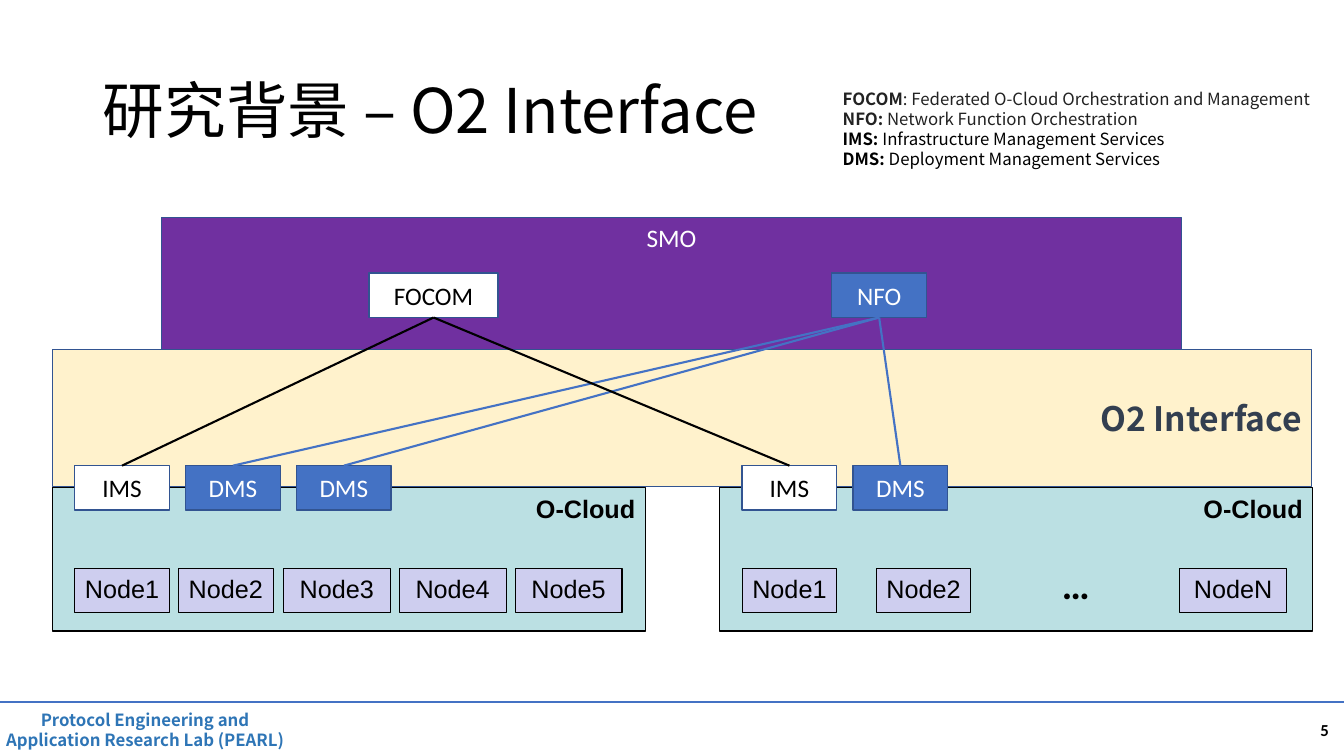
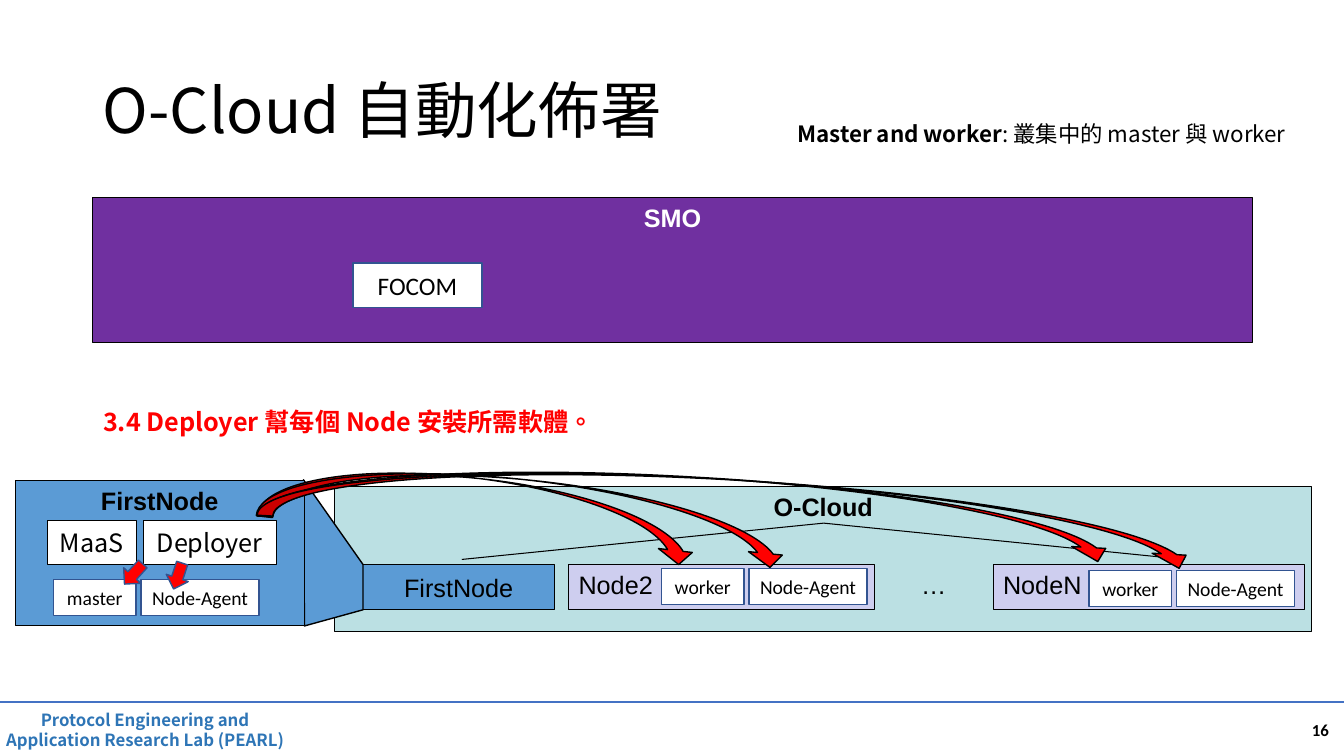
from dataclasses import dataclass

from lxml import etree
from pptx import Presentation
from pptx import util as u
from pptx.dml.color import RGBColor
from pptx.enum import shapes, text
from pptx.oxml.ns import qn

PX = 9144
KIND = shapes.MSO_SHAPE
LEFT, MID, RIGHT = text.PP_ALIGN.LEFT, text.PP_ALIGN.CENTER, text.PP_ALIGN.RIGHT
TOP, CTR = text.MSO_ANCHOR.TOP, text.MSO_ANCHOR.MIDDLE


@dataclass(frozen=True)
class Theme:
    """Colours, fonts and type sizes."""
    black: str = "000000"
    white: str = "FFFFFF"
    gray: str = "222222"
    slate: str = "333F50"
    blue: str = "4472C4"
    edge: str = "325491"
    brand: str = "2E75B6"
    sky: str = "5B9BD5"
    purple: str = "7030A0"
    cream: str = "FFF2CC"
    teal: str = "BBE0E3"
    lilac: str = "CECEEF"
    red: str = "FF0000"
    noto: str = "Noto Sans CJK SC"
    sans: str = "Calibri"
    arial: str = "Arial"
    title: int = 44
    dots: int = 28
    head: int = 24
    body: int = 18
    note: int = 16
    small: int = 14
    foot: int = 12


T = Theme()


def write(frame, words, font=T.sans, size=T.body, color=T.black, bold=False,
          align=MID, anchor=CTR, wrap=True, space=None, lang=None):
    """Fill a frame with a string, or with paragraphs of (text, bold, color) runs."""
    frame.word_wrap = wrap
    frame.auto_size = text.MSO_AUTO_SIZE.NONE
    frame.vertical_anchor = anchor
    paras = [[(words, bold, color)]] if isinstance(words, str) else words
    for i, runs in enumerate(paras):
        para = frame.add_paragraph() if i else frame.paragraphs[0]
        para.alignment = align
        if space:
            para.line_spacing = space
        for part, heavy, tint in runs:
            run = para.add_run()
            run.text = part
            run.font.name = font
            run.font.size = u.Pt(size)
            run.font.bold = heavy
            run.font.color.rgb = RGBColor.from_string(tint)
            east = etree.SubElement(run.font._element, qn("a:ea"))
            east.set("typeface", font)
            if lang:
                run.font._element.set("lang", lang)


class Deck:
    """Holds the presentation and the slide being drawn."""

    def __init__(self):
        """Start an empty wide deck."""
        self.show = Presentation()
        self.show.slide_width, self.show.slide_height = 1333 * PX, 750 * PX
        self.page = None

    def slide(self, title, num):
        """Add a slide with its title and footer."""
        self.page = self.show.slides.add_slide(self.show.slide_layouts[5]).shapes
        head = self.page.title
        head.left, head.top, head.width, head.height = (v * PX for v in (92, 40, 1150, 145))
        write(head.text_frame, title, font=T.noto, size=T.title, align=LEFT, space=0.9)
        self.label((1028, 704, 300, 40), str(num), size=T.foot, bold=True,
                   align=RIGHT, anchor=CTR)
        self.line((0, 696), (1333, 696), T.blue)
        self.label((-12, 699, 312, 50), "Protocol Engineering and Application Research Lab (PEARL)",
                   font=T.noto, size=T.foot, color=T.brand, bold=True)

    def label(self, area, words, anchor=TOP, **style):
        """Add a text box."""
        box = self.page.add_textbox(*(v * PX for v in area))
        write(box.text_frame, words, anchor=anchor, **style)

    def paint(self, shape, fill, edge, width):
        """Set fill and outline and drop the shadow."""
        shape.shadow.inherit = False
        shape.fill.solid()
        shape.fill.fore_color.rgb = RGBColor.from_string(fill)
        shape.line.color.rgb = RGBColor.from_string(edge)
        shape.line.width = u.Pt(width)

    def shape(self, kind, area, fill, edge=T.black, width=1, turn=0, adj=()):
        """Add a preset shape."""
        item = self.page.add_shape(kind, *(v * PX for v in area))
        self.paint(item, fill, edge, width)
        item.rotation = turn
        for i, val in enumerate(adj):
            item.adjustments[i] = val
        return item

    def box(self, area, words, fill=T.white, edge=T.edge, width=1, **style):
        """Add a rectangle with text."""
        item = self.shape(KIND.RECTANGLE, area, fill, edge, width)
        style.setdefault("wrap", style.get("align", MID) != MID)
        write(item.text_frame, words, **style)
        return item

    def thin(self, area, words, fill, **style):
        """Add a rectangle with a thin black edge and Arial text."""
        style = {"font": T.arial, "anchor": TOP, **style}
        return self.box(area, words, fill, T.black, 0.75, **style)

    def poly(self, first, rest, fill):
        """Add a closed outline."""
        build = self.page.build_freeform(*first, scale=PX)
        build.add_line_segments(rest, close=True)
        self.paint(build.convert_to_shape(), fill, T.black, 1)

    def line(self, start, end, color=T.black, width=1.5):
        """Add a straight line."""
        item = self.page.add_connector(shapes.MSO_CONNECTOR.STRAIGHT,
                                       *(v * PX for v in (*start, *end)))
        item.line.color.rgb = RGBColor.from_string(color)
        item.line.width = u.Pt(width)
        etree.SubElement(item._element.spPr, qn("a:effectLst"))
        return item

    def link(self, upper, lower, color):
        """Join the bottom of one box to the top of another."""
        item = self.line((0, 0), (0, 0), color)
        item.begin_connect(upper, 2)
        item.end_connect(lower, 0)

    def cloud(self, x, roles, nodes):
        """Add an O-Cloud with its services and nodes; return the services."""
        self.thin((x, 484, 588, 142), "O-Cloud", T.teal, bold=True, align=RIGHT)
        for name, left, wide in nodes:
            self.thin((left, 564, wide, 44), name, T.lilac)
        out = []
        for i, role in enumerate(roles):
            fill, color = (T.white, T.black) if role == "IMS" else (T.blue, T.white)
            out.append(self.box((x + 22 + 110 * i, 462, 94, 44), role, fill, color=color))
        return out

    def pair(self, x, y, name):
        """Add a role box and the Node-Agent box beside it."""
        self.box((x, y, 82, 36), name, size=T.small)
        self.box((x + 87, y, 117, 36), "Node-Agent", size=T.small)


def relations(deck):
    """Draw the O2 interface slide."""
    deck.slide("研究背景 – O2 Interface", 5)
    deck.box((52, 347, 1249, 136), "O2 Interface", T.cream, font=T.noto, size=T.head,
             color=T.slate, bold=True, align=RIGHT)
    terms = (("FOCOM", ": Federated O-Cloud Orchestration and Management", T.gray),
             ("NFO:", " Network Function Orchestration", T.gray),
             ("IMS: ", "Infrastructure Management Services", T.black),
             ("DMS:", " Deployment Management Services", T.black))
    deck.label((826, 83, 503, 91), [[(key, True, tint), (rest, False, tint)]
                                    for key, rest, tint in terms],
               font=T.noto, size=T.foot, align=LEFT)
    deck.box((160, 216, 1012, 131), "SMO", T.purple, color=T.white, anchor=TOP)
    focom = deck.box((366, 271, 128, 44), "FOCOM")
    nfo = deck.box((825, 271, 94, 44), "NFO", T.blue, color=T.white)
    near = deck.cloud(52, ("IMS", "DMS", "DMS"),
                      (("Node1", 74, 94), ("Node2", 177, 94), ("Node3", 281, 106),
                       ("Node4", 396, 106), ("Node5", 511, 106)))
    far = deck.cloud(714, ("IMS", "DMS"),
                     (("Node1", 736, 94), ("Node2", 869, 94), ("NodeN", 1170, 106)))
    deck.label((1026, 551, 82, 57), "…", size=T.dots, bold=True)
    for ims, *dms in (near, far):
        deck.link(focom, ims, T.black)
        for item in dms:
            deck.link(nfo, item, T.blue)


def deploy(deck):
    """Draw the automatic deployment slide."""
    deck.slide("O-Cloud 自動化佈署", 16)
    deck.thin((332, 483, 969, 144), "O-Cloud", T.teal, bold=True)
    deck.thin((360, 560, 190, 45), "FirstNode", T.sky, anchor=CTR)
    deck.thin((564, 560, 303, 45), "Node2", T.lilac, align=LEFT)
    deck.thin((985, 560, 309, 45), "NodeN", T.lilac, align=LEFT)
    for x in (458, 1175):
        deck.line((817, 519), (x, 555), width=0.75)
    deck.label((878, 560, 96, 40), "…", font=T.arial)
    deck.pair(656, 564, "worker")
    deck.pair(1080, 566, "worker")
    deck.thin((92, 196, 1150, 144), "SMO", T.purple, color=T.white, bold=True)
    deck.box((350, 261, 128, 44), "FOCOM")
    deck.poly((301, 476), ((360, 560), (360, 605), (302, 621)), T.sky)
    deck.thin((15, 477, 287, 144), "FirstNode", T.sky, bold=True)
    for name, x, wide in (("Deployer", 142, 132), ("MaaS", 47, 88)):
        deck.thin((x, 516, wide, 44), name, T.white, font=T.noto, anchor=CTR)
    deck.pair(53, 575, "master")
    for x, y, wide, turn in ((257, 475, 438, 6.6), (256, 476, 529, 5.8),
                             (256, 473, 852, 3.1), (256, 476, 933, 3.3)):
        deck.shape(KIND.CURVED_DOWN_ARROW, (x, y, wide, 62), T.red,
                   turn=turn, adj=(0.25, 0.545, 0.216))
    deck.label((90, 398, 511, 40), "3.4 Deployer 幫每個 Node 安裝所需軟體。",
               font=T.noto, color=T.red, bold=True, lang="zh-TW")
    for x, y, turn in ((165, 558, 18.3), (121, 556, 42.1)):
        deck.shape(KIND.DOWN_ARROW, (x, y, 23, 27), T.red, T.edge, turn=turn)
    deck.label((781, 114, 533, 37),
               [[("Master and worker", True, T.black),
                 (": 叢集中的 master 與 worker", False, T.black)]],
               font=T.noto, size=T.note, align=LEFT)


def main():
    """Build and save the deck."""
    deck = Deck()
    relations(deck)
    deploy(deck)
    deck.show.save("out.pptx")


if __name__ == "__main__":
    main()
